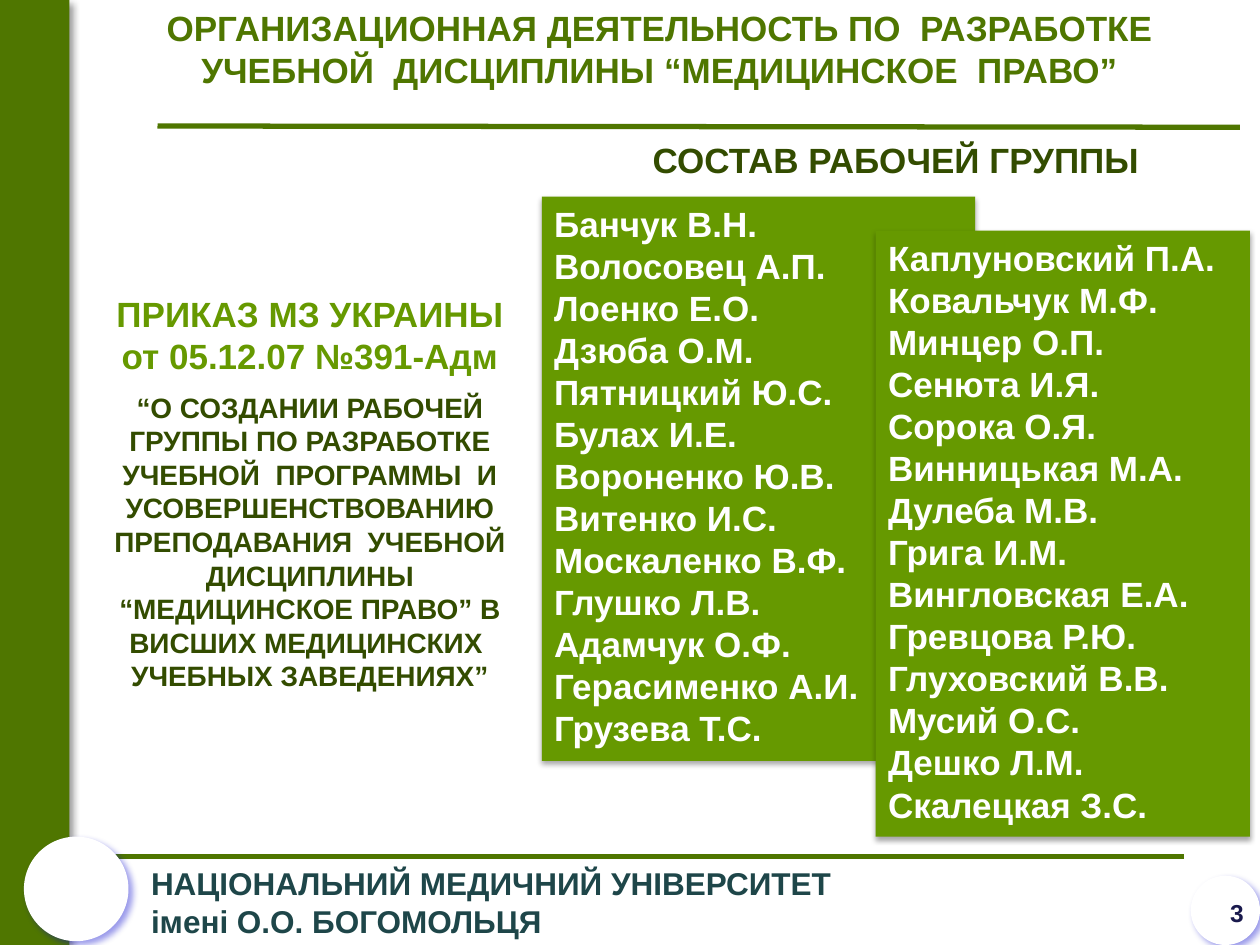
from lxml import etree
from pptx import Presentation
from pptx.dml.color import RGBColor
from pptx.enum.shapes import MSO_CONNECTOR, MSO_SHAPE
from pptx.enum.text import MSO_ANCHOR, PP_ALIGN
from pptx.oxml.ns import qn
from pptx.util import Inches, Pt

RECTANGLE, OVAL = MSO_SHAPE.RECTANGLE, MSO_SHAPE.OVAL
STRAIGHT = MSO_CONNECTOR.STRAIGHT
TOP = MSO_ANCHOR.TOP
LEFT, CENTER, RIGHT = PP_ALIGN.LEFT, PP_ALIGN.CENTER, PP_ALIGN.RIGHT

FONT = "Arial"
WHITE, DARK_GREEN, GREEN, OLIVE = "FFFFFF", "4F7600", "669900", "334C00"
TEAL, NAVY = "1E4649", "19194D"
BAR_SHADOW = ("000000", 40, 4, 3, 45)
CIRCLE_SHADOW = ("0000CC", 40, 4, 3, 45)
PANEL_SHADOW = ("000000", 35, 3.1, 1.8, 90)

FIRST_MEMBERS = [
    "Банчук В.Н.", "Волосовец А.П.", "Лоенко Е.О.", "Дзюба О.М.",
    "Пятницкий Ю.С.", "Булах И.Е.", "Вороненко Ю.В.", "Витенко И.С.",
    "Москаленко В.Ф.", "Глушко Л.В.", "Адамчук О.Ф.", "Герасименко А.И.",
    "Грузева Т.С.",
]
SECOND_MEMBERS = [
    "Каплуновский П.А.", "Ковальчук М.Ф.", "Минцер О.П.", "Сенюта И.Я.",
    "Сорока О.Я.", "Винницькая М.А.", "Дулеба М.В.", "Грига И.М.",
    "Вингловская Е.А.", "Гревцова Р.Ю.", "Глуховский В.В.", "Мусий О.С.",
    "Дешко Л.М.", "Скалецкая З.С.",
]


def color(value):
    return RGBColor.from_string(value)


def add_shadow(shape, shade, opacity, blur, distance, angle):
    shape.shadow.inherit = False
    effects = shape._element.spPr.find(qn("a:effectLst"))
    outer = etree.SubElement(
        effects, qn("a:outerShdw"), blurRad=str(Pt(blur)),
        dist=str(Pt(distance)), dir=str(angle * 60000),
        algn="ctr", rotWithShape="0")
    tint = etree.SubElement(outer, qn("a:srgbClr"), val=shade)
    etree.SubElement(tint, qn("a:alpha"), val=str(opacity * 1000))


def add_block(page, kind, place, fill, shadow):
    shape = page.shapes.add_shape(kind, *map(Inches, place))
    shape.fill.solid()
    shape.fill.fore_color.rgb = color(fill)
    shape.line.fill.background()
    add_shadow(shape, *shadow)
    return shape


def add_rule(page, start, end):
    rule = page.shapes.add_connector(STRAIGHT, *map(Inches, start + end))
    rule.line.color.rgb = color(DARK_GREEN)
    rule.line.width = Pt(3)
    etree.SubElement(rule._element.spPr, qn("a:effectLst"))


def write(box, lines, align=LEFT, gap=0):
    frame = box.text_frame
    frame.word_wrap = True
    frame.vertical_anchor = TOP
    for index, (text, size, shade) in enumerate(lines):
        para = frame.add_paragraph() if index else frame.paragraphs[0]
        para.alignment = align
        if index and gap:
            para.space_before = Pt(gap)
        span = para.add_run()
        span.text = text
        span.font.name = FONT
        span.font.size = Pt(size)
        span.font.bold = True
        span.font.color.rgb = color(shade)


def add_text(page, place, lines, align=LEFT, gap=0):
    write(page.shapes.add_textbox(*map(Inches, place)), lines, align, gap)


def add_member_panel(page, place, members):
    panel = add_block(page, RECTANGLE, place, GREEN, PANEL_SHADOW)
    write(panel, [(member, 20, WHITE) for member in members])


def add_frame(page):
    add_block(page, RECTANGLE, (0, 0, 0.55, 7.5), DARK_GREEN, BAR_SHADOW)
    add_rule(page, (1.25, 1), (9.84, 1.01))
    add_rule(page, (0.62, 6.8), (9.4, 6.8))
    add_block(page, OVAL, (0.19, 6.64, 0.83, 0.83), WHITE, CIRCLE_SHADOW)
    add_text(page, (1.1, 6.81, 8.05, 0.71), [
        ("НАЦІОНАЛЬНИЙ МЕДИЧНИЙ УНІВЕРСИТЕТ", 18, TEAL),
        ("імені О.О. БОГОМОЛЬЦЯ", 18, TEAL),
    ])
    add_block(page, OVAL, (9.45, 6.95, 0.55, 0.55), WHITE, CIRCLE_SHADOW)
    add_text(page, (7.64, 7.08, 2.33, 0.52), [("3", 14, NAVY)], RIGHT)


def main():
    deck = Presentation()
    deck.slide_width, deck.slide_height = Inches(10), Inches(7.5)
    page = deck.slides.add_slide(deck.slide_layouts[6])
    add_frame(page)
    add_text(page, (0.78, 0, 8.91, 0.77), [
        ("ОРГАНИЗАЦИОННАЯ ДЕЯТЕЛЬНОСТЬ ПО  РАЗРАБОТКЕ "
         "УЧЕБНОЙ  ДИСЦИПЛИНЫ “МЕДИЦИНСКОЕ  ПРАВО”", 20, DARK_GREEN),
    ], CENTER)
    add_text(page, (0.78, 2.27, 3.36, 3.33), [
        ("ПРИКАЗ МЗ УКРАИНЫ от 05.12.07 №391-Адм", 20, GREEN),
        ("“О СОЗДАНИИ РАБОЧЕЙ ГРУППЫ ПО РАЗРАБОТКЕ УЧЕБНОЙ  ПРОГРАММЫ  И "
         "УСОВЕРШЕНСТВОВАНИЮ ПРЕПОДАВАНИЯ  УЧЕБНОЙ ДИСЦИПЛИНЫ "
         "“МЕДИЦИНСКОЕ ПРАВО” В ВИСШИХ МЕДИЦИНСКИХ  УЧЕБНЫХ ЗАВЕДЕНИЯХ”",
         16, OLIVE),
    ], CENTER, gap=8)
    add_member_panel(page, (4.3, 1.56, 3.44, 4.48), FIRST_MEMBERS)
    add_member_panel(page, (6.95, 1.83, 2.97, 4.81), SECOND_MEMBERS)
    add_text(page, (4.61, 1.05, 5, 0.44),
             [("СОСТАВ РАБОЧЕЙ ГРУППЫ", 20, OLIVE)], CENTER)
    deck.save("out.pptx")


if __name__ == "__main__":
    main()
